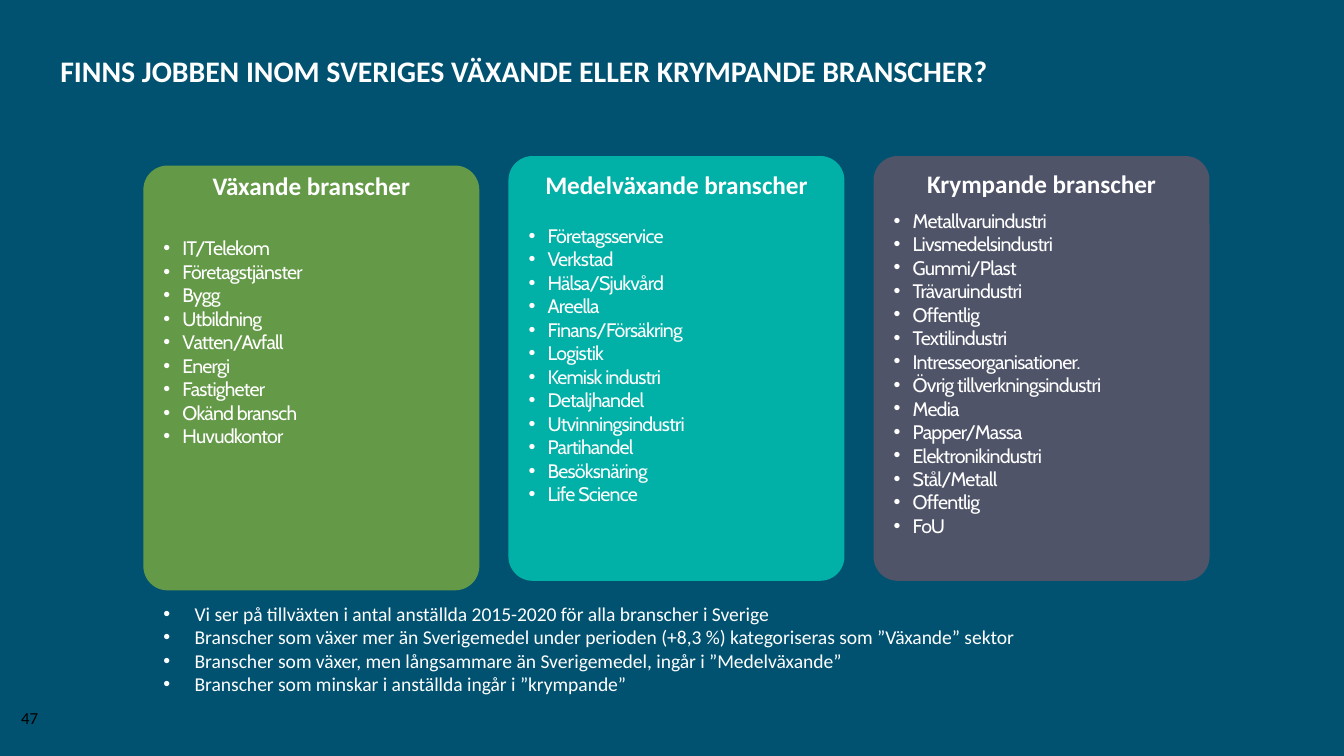
from lxml import etree
from pptx import Presentation
from pptx.dml.color import RGBColor
from pptx.enum.shapes import MSO_SHAPE
from pptx.enum.text import MSO_ANCHOR, MSO_AUTO_SIZE, PP_ALIGN
from pptx.oxml.ns import qn
from pptx.util import Cm, Pt

ROUNDED = MSO_SHAPE.ROUNDED_RECTANGLE
BOTTOM = MSO_ANCHOR.BOTTOM
NO_AUTOFIT = MSO_AUTO_SIZE.NONE
LEFT, CENTER = PP_ALIGN.LEFT, PP_ALIGN.CENTER

NAVY = RGBColor(0x00, 0x52, 0x70)
GREEN = RGBColor(0x64, 0x9A, 0x47)
TEAL = RGBColor(0x01, 0xB0, 0xA7)
SLATE = RGBColor(0x50, 0x54, 0x69)
WHITE = RGBColor(0xFF, 0xFF, 0xFF)
BLACK = RGBColor(0x00, 0x00, 0x00)


def set_font(paragraph, size, color, name="Calibri", bold=False):
    font = paragraph.font
    font.size, font.name, font.bold = Pt(size), name, bold
    font.color.rgb = color


def add_bullet(paragraph, indent):
    properties = paragraph._p.get_or_add_pPr()
    properties.set("marL", str(indent))
    properties.set("indent", str(-indent))
    bullet_color = etree.SubElement(properties, qn("a:buClr"))
    etree.SubElement(bullet_color, qn("a:srgbClr")).set("val", str(WHITE))
    etree.SubElement(properties, qn("a:buFont")).set("typeface", "Arial")
    etree.SubElement(properties, qn("a:buChar")).set("char", "•")


presentation = Presentation()
presentation.slide_width, presentation.slide_height = Cm(25.4), Cm(14.29)
slide = presentation.slides.add_slide(presentation.slide_layouts[5])
slide.background.fill.solid()
slide.background.fill.fore_color.rgb = NAVY

# Title
title = slide.shapes.title
title.left, title.top, title.width, title.height = Cm(1.14), Cm(0.84), Cm(23.09), Cm(0.81)
frame = title.text_frame
frame.text = "FINNS JOBBEN INOM SVERIGES VÄXANDE ELLER KRYMPANDE BRANSCHER?"
frame.auto_size = NO_AUTOFIT
frame.vertical_anchor = BOTTOM
frame.margin_left = frame.margin_right = frame.margin_top = frame.margin_bottom = 0
paragraph = frame.paragraphs[0]
paragraph.alignment = LEFT
paragraph.line_spacing = 0.7
set_font(paragraph, 16, WHITE, bold=True)

# Cards: heading, colour, card top, text top, gap under heading (pt), industries
cards = [
    ("Växande branscher", GREEN, 3.13, 2.97, 19,
     ["IT/Telekom", "Företagstjänster", "Bygg", "Utbildning", "Vatten/Avfall",
      "Energi", "Fastigheter", "Okänd bransch", "Huvudkontor"]),
    ("Medelväxande branscher", TEAL, 2.95, 2.95, 12.8,
     ["Företagsservice", "Verkstad", "Hälsa/Sjukvård", "Areella",
      "Finans/Försäkring", "Logistik", "Kemisk industri", "Detaljhandel",
      "Utvinningsindustri", "Partihandel", "Besöksnäring", "Life Science"]),
    ("Krympande branscher", SLATE, 2.95, 2.92, 5.5,
     ["Metallvaruindustri", "Livsmedelsindustri", "Gummi/Plast",
      "Trävaruindustri", "Offentlig", "Textilindustri",
      "Intresseorganisationer.", "Övrig tillverkningsindustri", "Media",
      "Papper/Massa", "Elektronikindustri", "Stål/Metall", "Offentlig", "FoU"]),
]
CARD_WIDTH, CARD_HEIGHT, CARD_PITCH = 6.35, 8.03, 6.9
for index, (heading, color, card_top, text_top, gap, industries) in enumerate(cards):
    left = Cm(2.71 + index * CARD_PITCH)
    group = slide.shapes.add_group_shape()
    card = group.shapes.add_shape(ROUNDED, left, Cm(card_top), Cm(CARD_WIDTH), Cm(CARD_HEIGHT))
    card.adjustments[0] = 0.072
    card.shadow.inherit = False
    card.fill.solid()
    card.fill.fore_color.rgb = color
    card.line.fill.background()

    text_box = group.shapes.add_textbox(left, Cm(text_top), Cm(CARD_WIDTH), Cm(CARD_HEIGHT))
    frame = text_box.text_frame
    frame.word_wrap = True
    frame.margin_left = frame.margin_right = frame.margin_bottom = Cm(0.38)
    frame.margin_top = Cm(0.3)
    paragraph = frame.paragraphs[0]
    paragraph.text = heading
    paragraph.alignment = CENTER
    paragraph.line_spacing = Pt(15)
    paragraph.space_after = Pt(gap)
    set_font(paragraph, 13.5, WHITE, bold=True)
    for industry in industries:
        paragraph = frame.add_paragraph()
        run = paragraph.add_run()
        run.text = industry
        run._r.get_or_add_rPr().set("spc", "-40")
        add_bullet(paragraph, Cm(0.36))
        set_font(paragraph, 10.5, WHITE, name="Cabin")

# Definitions below the cards
definitions = [
    "Vi ser på tillväxten i antal anställda 2015-2020 för alla branscher i Sverige",
    "Branscher som växer mer än Sverigemedel under perioden (+8,3 %) kategoriseras som ”Växande” sektor",
    "Branscher som växer, men långsammare än Sverigemedel, ingår i ”Medelväxande”",
    "Branscher som minskar i anställda ingår i ”krympande”",
]
frame = slide.shapes.add_textbox(Cm(2.84), Cm(11.25), Cm(20.02), Cm(2.06)).text_frame
frame.word_wrap = True
frame.text = "\n".join(definitions)
for paragraph in frame.paragraphs:
    add_bullet(paragraph, Cm(0.59))
    set_font(paragraph, 10.5, WHITE)

# Page number
frame = slide.shapes.add_textbox(Cm(0.15), Cm(13.26), Cm(0.99), Cm(0.51)).text_frame
frame.word_wrap = True
frame.text = "47"
set_font(frame.paragraphs[0], 9, BLACK)

presentation.save("out.pptx")
